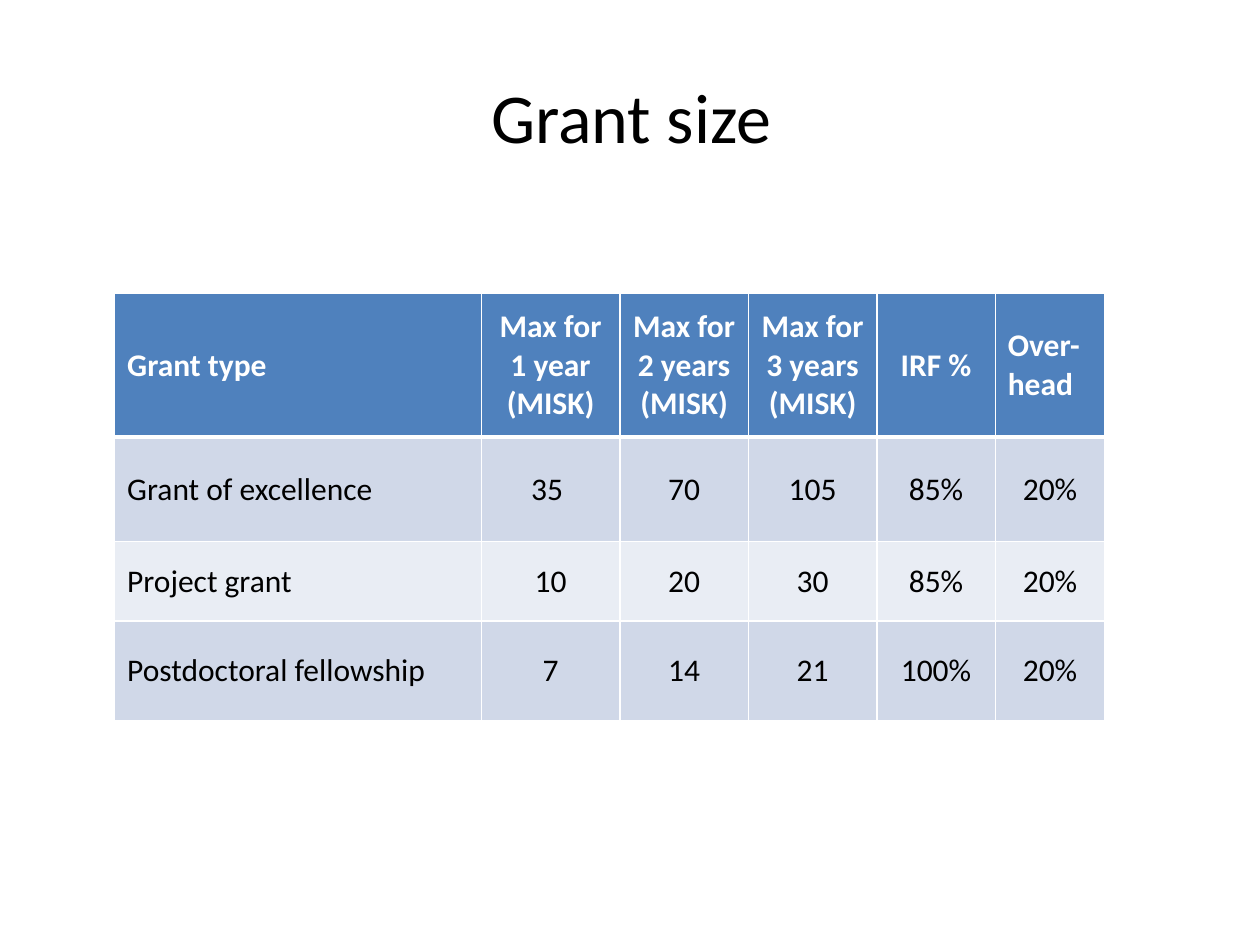
from lxml.etree import SubElement
from pptx import Presentation
from pptx.dml.color import RGBColor
from pptx.enum.text import MSO_ANCHOR, PP_ALIGN
from pptx.oxml.ns import qn
from pptx.util import Inches, Pt

COLORS = {
    "text": "000000",
    "white": "FFFFFF",
    "header": "4F81BD",
    "odd_row": "D0D8E8",
    "even_row": "E9EDF4",
}
FONT = "Calibri"
COLUMN_WIDTHS = [2.91, 1.1, 1.02, 1.02, 0.94, 0.87]
ROW_HEIGHTS = [1.14, 0.83, 0.63, 0.79]
GRANTS = [
    ["Grant type", "Max for 1 year\n(MISK)", "Max for 2 years\n(MISK)",
     "Max for 3 years (MISK)", "IRF %", "Over-head"],
    ["Grant of excellence", "35 ", "70", "105", "85%", "20%"],
    ["Project grant", "10", "20", "30", "85%", "20%"],
    ["Postdoctoral fellowship", "7", "14", "21", "100%", "20%"],
]


def write_text(text_frame, text, size, color, alignment, bold=False):
    """Write each line of text as a formatted paragraph."""
    for index, line in enumerate(text.split("\n")):
        paragraph = text_frame.add_paragraph() if index else text_frame.paragraphs[0]
        paragraph.alignment = alignment
        run = paragraph.add_run()
        run.text = line
        run.font.name = FONT
        run.font.size = Pt(size)
        run.font.bold = bold
        run.font.color.rgb = RGBColor.from_string(COLORS[color])


def set_borders(cell, widths):
    """Draw white cell borders with the given width in points for each side."""
    properties = cell._tc.get_or_add_tcPr()
    for side, width in widths.items():
        line = SubElement(properties, qn(f"a:ln{side}"), w=str(Pt(width)))
        fill = SubElement(line, qn("a:solidFill"))
        SubElement(fill, qn("a:srgbClr"), val=COLORS["white"])


def add_title(slide, left, top, width, height):
    """Place and format the slide title in its box."""
    title = slide.shapes.title
    title.left, title.top = Inches(left), Inches(top)
    title.width, title.height = Inches(width), Inches(height)
    title.text_frame.vertical_anchor = MSO_ANCHOR.MIDDLE
    write_text(title.text_frame, "Grant size", 40, "text", PP_ALIGN.CENTER)


def add_grant_table(slide, left, top, width, height):
    """Place the table of grant sizes in its box."""
    table = slide.shapes.add_table(
        len(GRANTS), len(COLUMN_WIDTHS),
        Inches(left), Inches(top), Inches(width), Inches(height)).table
    for column, column_width in zip(table.columns, COLUMN_WIDTHS):
        column.width = Inches(column_width)
    for row, row_height in zip(table.rows, ROW_HEIGHTS):
        row.height = Inches(row_height)
    for row_index, values in enumerate(GRANTS):
        is_header = row_index == 0
        fill = "header" if is_header else "odd_row" if row_index % 2 else "even_row"
        for column_index, value in enumerate(values):
            cell = table.cell(row_index, column_index)
            set_borders(cell, {"L": 1, "R": 1, "T": 3 if row_index == 1 else 1,
                               "B": 3 if is_header else 1})
            cell.fill.solid()
            cell.fill.fore_color.rgb = RGBColor.from_string(COLORS[fill])
            cell.vertical_anchor = MSO_ANCHOR.MIDDLE
            is_left = column_index == 0 or value == "Over-head"
            write_text(cell.text_frame, value, 18, "white" if is_header else "text",
                       PP_ALIGN.LEFT if is_left else PP_ALIGN.CENTER, is_header)


def main():
    """Build and save the grant size slide."""
    presentation = Presentation()
    presentation.slide_width, presentation.slide_height = Inches(10), Inches(7.5)
    slide = presentation.slides.add_slide(presentation.slide_layouts[5])
    add_title(slide, 0.51, 0.29, 9, 1.25)
    add_grant_table(slide, 0.91, 2.33, sum(COLUMN_WIDTHS), sum(ROW_HEIGHTS))
    presentation.save("out.pptx")


if __name__ == "__main__":
    main()
